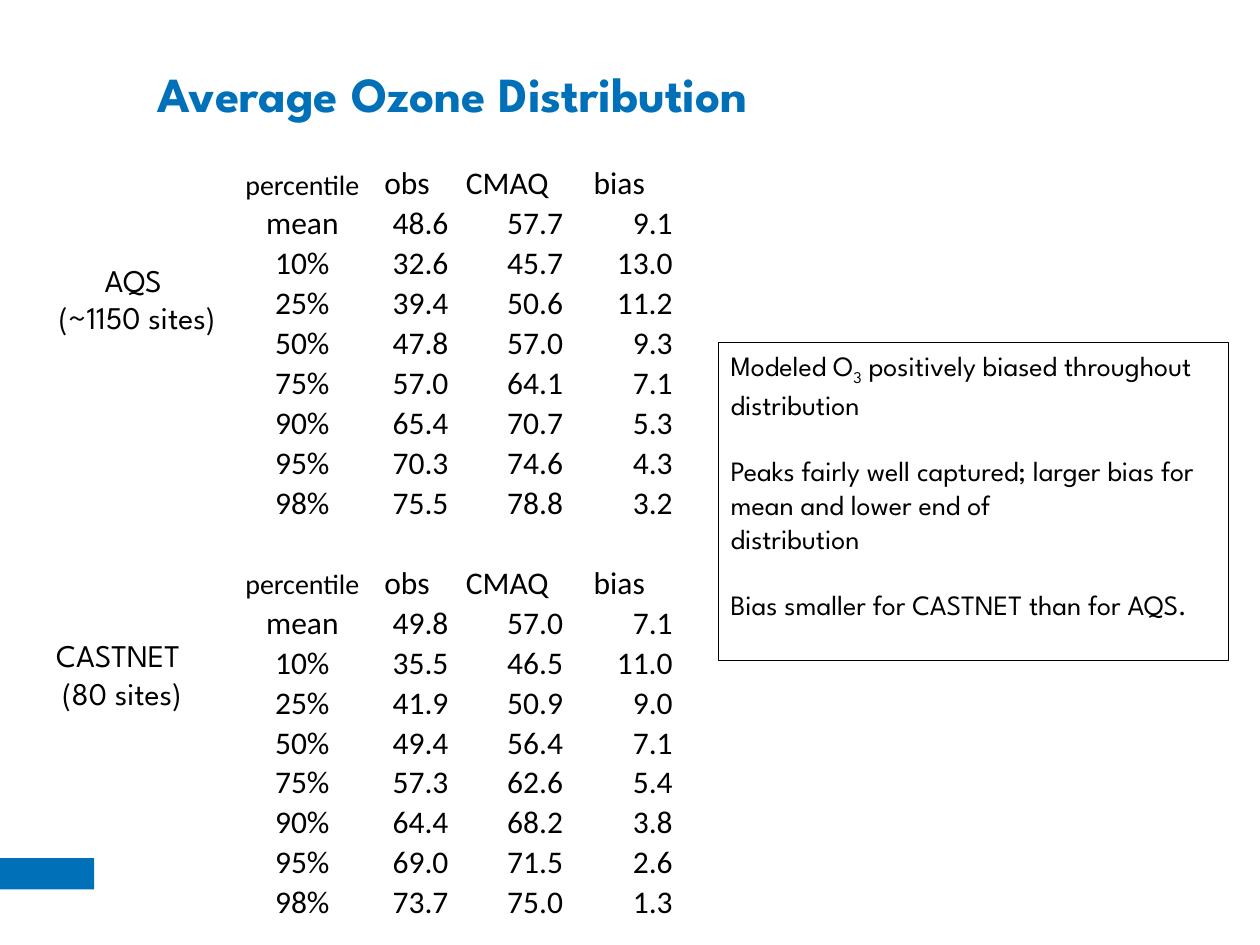
from dataclasses import dataclass

from lxml.etree import SubElement
from pptx import Presentation
from pptx.dml.color import RGBColor
from pptx.enum.shapes import MSO_SHAPE
from pptx.enum.text import MSO_ANCHOR, MSO_AUTO_SIZE, PP_ALIGN
from pptx.oxml.ns import qn
from pptx.util import Cm, Pt


@dataclass(frozen=True)
class Theme:
    blue: RGBColor = RGBColor(0x00, 0x70, 0xB9)
    black: RGBColor = RGBColor(0, 0, 0)
    head_font: str = "League Spartan"
    table_font: str = "Calibri"
    title: Pt = Pt(28)
    label: Pt = Pt(18)
    note: Pt = Pt(16)


THEME = Theme()
HEADER = ("percentile", "obs", "CMAQ", "bias")
LEVELS = ("mean", "10%", "25%", "50%", "75%", "90%", "95%", "98%")
COLUMN_WIDTHS = (2.49, 1.73, 2.31, 2.21)
AQS = (
    ("48.6", "57.7", "9.1"), ("32.6", "45.7", "13.0"),
    ("39.4", "50.6", "11.2"), ("47.8", "57.0", "9.3"),
    ("57.0", "64.1", "7.1"), ("65.4", "70.7", "5.3"),
    ("70.3", "74.6", "4.3"), ("75.5", "78.8", "3.2"),
)
CASTNET = (
    ("49.8", "57.0", "7.1"), ("35.5", "46.5", "11.0"),
    ("41.9", "50.9", "9.0"), ("49.4", "56.4", "7.1"),
    ("57.3", "62.6", "5.4"), ("64.4", "68.2", "3.8"),
    ("69.0", "71.5", "2.6"), ("73.7", "75.0", "1.3"),
)
NOTES = (
    (("Modeled O", False), ("3", True), (" positively biased throughout distribution", False)),
    (("Peaks fairly well captured; larger bias for mean and lower end of \vdistribution", False),),
    (("Bias smaller for CASTNET than for AQS.", False),),
)


def apply(target, formats):
    for name, value in formats.items():
        setattr(target, name, value)


def add_text(p, text, size, font=THEME.head_font, color=THEME.black, bold=False):
    """Add runs to a paragraph, with a line break at each vertical tab."""
    for i, line in enumerate(text.split("\v")):
        if i:
            p.add_line_break()
        r = p.add_run()
        r.text = line
        apply(r.font, {"size": size, "name": font, "bold": bold})
        r.font.color.rgb = color
    return r


def add_title(s, text):
    sp = s.shapes.title
    apply(sp, {"left": Cm(2.77), "top": Cm(0.28), "width": Cm(22.07), "height": Cm(3.18)})
    tf = sp.text_frame
    apply(tf, {"vertical_anchor": MSO_ANCHOR.MIDDLE, "auto_size": MSO_AUTO_SIZE.NONE,
               "margin_left": Cm(0.4)})
    p = tf.paragraphs[0]
    p.alignment = PP_ALIGN.LEFT
    add_text(p, text, THEME.title, color=THEME.blue, bold=True)


def add_rect(s, left, top, width, height):
    sp = s.shapes.add_shape(MSO_SHAPE.RECTANGLE, Cm(left), Cm(top), Cm(width), Cm(height))
    sp.shadow.inherit = False
    return sp


def add_accent_bar(s):
    sp = add_rect(s, 0, 17.3, 1.9, 0.63)
    sp.fill.solid()
    sp.fill.fore_color.rgb = THEME.blue
    sp.line.fill.background()


def add_label(s, text, left, top, width, wrap):
    tf = s.shapes.add_textbox(Cm(left), Cm(top), Cm(width), Cm(1.8)).text_frame
    apply(tf, {"word_wrap": wrap, "auto_size": MSO_AUTO_SIZE.SHAPE_TO_FIT_TEXT})
    p = tf.paragraphs[0]
    p.alignment = PP_ALIGN.CENTER
    add_text(p, text, THEME.label)


def add_notes_box(s):
    sp = add_rect(s, 14.48, 6.91, 10.29, 6.4)
    sp.fill.background()
    sp.line.color.rgb = THEME.black
    sp.line.width = Pt(0.75)
    tf = sp.text_frame
    apply(tf, {"word_wrap": True, "vertical_anchor": MSO_ANCHOR.TOP})
    for i, pieces in enumerate(NOTES):
        p = tf.add_paragraph() if i else tf.paragraphs[0]
        apply(p, {"alignment": PP_ALIGN.LEFT, "space_before": Pt(19 if i else 0)})
        for text, subscript in pieces:
            r = add_text(p, text, THEME.note)
            if subscript:
                r.font._element.set("baseline", "-25000")


def fill_cell(cell, text, align):
    apply(cell, {"margin_left": Cm(0.03), "margin_right": Cm(0.03), "margin_top": Cm(0.03),
                 "margin_bottom": 0, "vertical_anchor": MSO_ANCHOR.BOTTOM})
    cell.fill.background()
    p = cell.text_frame.paragraphs[0]
    p.alignment = align
    if text:
        size = THEME.note if text == HEADER[0] else THEME.label
        add_text(p, text, size, THEME.table_font)
    else:
        SubElement(p._p, qn("a:endParaRPr")).set("sz", str(int(THEME.label.pt * 100)))


def network_rows(values):
    return [HEADER] + [(level, *row) for level, row in zip(LEVELS, values)]


def add_percentile_table(s):
    """Stack both networks in one table, with an empty row between them."""
    rows = network_rows(AQS) + [("",) * len(HEADER)] + network_rows(CASTNET)
    table = s.shapes.add_table(len(rows), len(HEADER), Cm(4.85), Cm(3.28),
                               Cm(sum(COLUMN_WIDTHS)), Cm(14.99)).table
    apply(table, {"first_row": False, "horz_banding": False})
    for column, width in zip(table.columns, COLUMN_WIDTHS):
        column.width = Cm(width)
    for i, row in enumerate(rows):
        for j, text in enumerate(row):
            is_number = j > 0 and row != HEADER
            fill_cell(table.cell(i, j), text, PP_ALIGN.RIGHT if is_number else PP_ALIGN.CENTER)


def main():
    prs = Presentation()
    apply(prs, {"slide_width": Cm(25.4), "slide_height": Cm(19.05)})
    s = prs.slides.add_slide(prs.slide_layouts[5])
    add_accent_bar(s)
    add_percentile_table(s)
    add_title(s, "Average Ozone Distribution")
    add_notes_box(s)
    add_label(s, "AQS \v(~1150 sites)", 0.43, 5.13, 4.67, True)
    add_label(s, "CASTNET \v(80 sites)", 0.58, 12.7, 3.76, False)
    prs.save("out.pptx")


if __name__ == "__main__":
    main()
